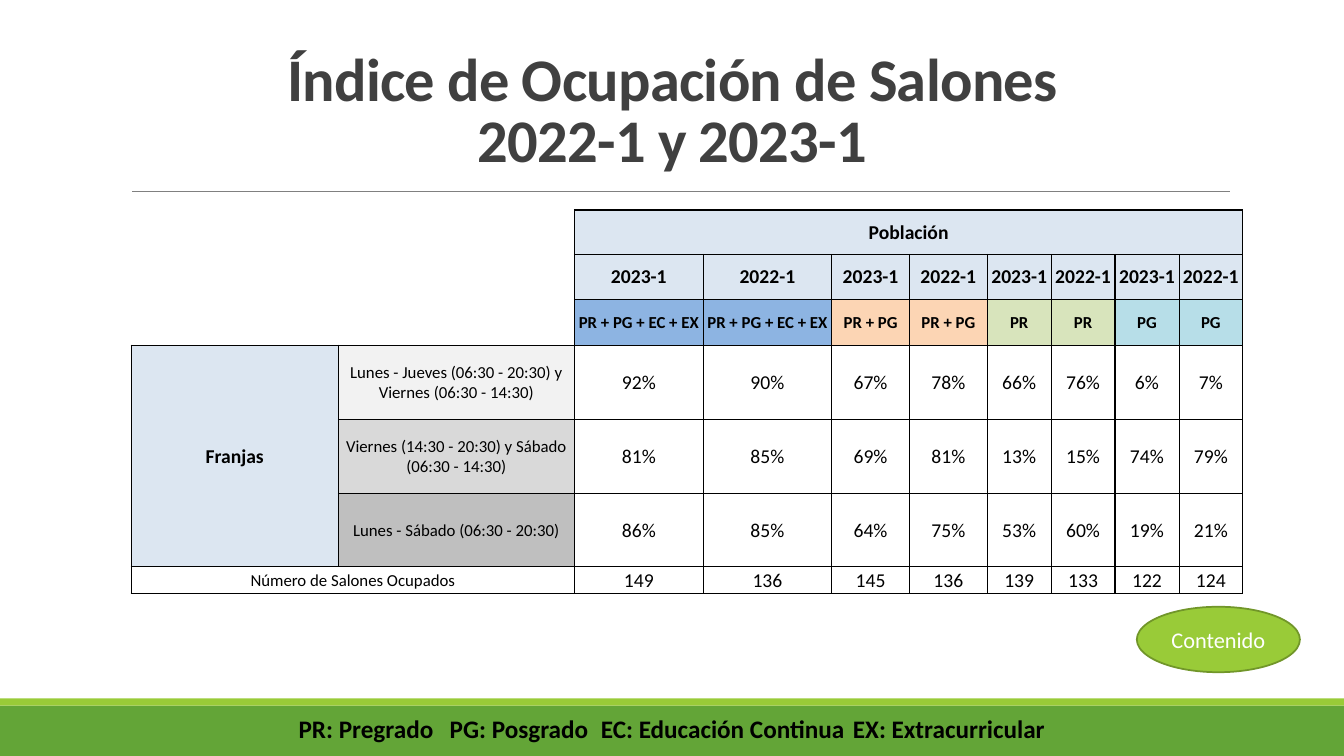
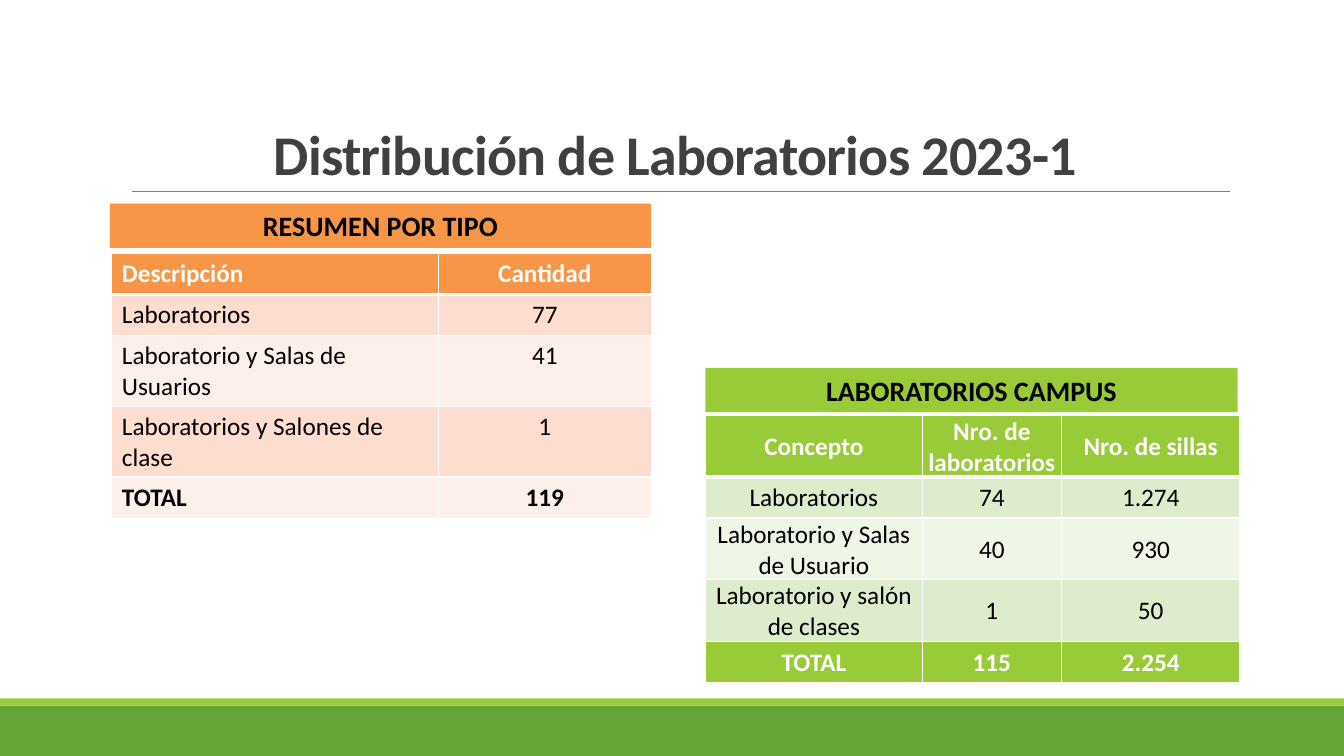
from dataclasses import dataclass
from typing import NamedTuple

from lxml.etree import SubElement
from pptx import Presentation
from pptx.dml.color import RGBColor
from pptx.enum.shapes import MSO_CONNECTOR, MSO_SHAPE
from pptx.enum.text import MSO_ANCHOR, PP_ALIGN
from pptx.oxml import parse_xml
from pptx.oxml.ns import nsdecls, qn
from pptx.shapes.autoshape import Shape
from pptx.slide import Slide
from pptx.table import Table, _Cell
from pptx.text.text import TextFrame
from pptx.util import Cm, Pt


@dataclass(frozen=True)
class Theme:
    font: str = "Calibri"
    black: str = "000000"
    white: str = "FFFFFF"
    title: str = "404040"
    rule: str = "808080"
    green: str = "63A537"
    lime: str = "99CB38"
    olive: str = "719629"
    lime_bands: tuple[str, str] = ("DEECCE", "EFF6E8")
    orange: str = "F79646"
    orange_bands: tuple[str, str] = ("FCDDCF", "FDEFE9")
    header: str = "DCE6F1"
    populations: tuple[str, ...] = ("8DB4E2", "FCD5B4", "D8E4BC", "B7DEE8")
    greys: tuple[str, ...] = ("F2F2F2", "D9D9D9", "BFBFBF")
    banner_size: float = 20
    body_size: float = 18
    button_size: float = 16
    value_size: float = 14
    label_size: float = 12


THEME = Theme()


class Area(NamedTuple):
    left: float
    top: float
    width: float
    height: float


class Edges(NamedTuple):
    left: float = 0
    right: float = 0
    top: float = 0
    bottom: float = 0


@dataclass(frozen=True)
class Type:
    size: float
    color: str = THEME.black
    bold: bool = False
    align: PP_ALIGN = PP_ALIGN.CENTER
    anchor: MSO_ANCHOR = MSO_ANCHOR.MIDDLE
    tracking: int = 0
    line_spacing: float | None = None


@dataclass(frozen=True)
class Summary:
    heading: str
    banner: Area
    color: str
    bands: tuple[str, str]
    left: float
    top: float
    columns: tuple[float, ...]
    heights: tuple[float, ...]
    rows: tuple[tuple[str, ...], ...]
    compact: bool
    filled_total: bool


def write(frame: TextFrame, text: str, kind: Type) -> None:
    frame.word_wrap = True
    para = frame.paragraphs[0]
    para.alignment = kind.align
    para.line_spacing = kind.line_spacing
    for index, line in enumerate(text.split("\n")):
        if index:
            para.add_line_break()
        span = para.add_run()
        span.text = line
        span.font.name = THEME.font
        span.font.size = Pt(kind.size)
        span.font.bold = kind.bold
        span.font.color.rgb = RGBColor.from_string(kind.color)
        if kind.tracking:
            span.font._element.set("spc", str(kind.tracking))


def add_text(page: Slide, area: Area, text: str, kind: Type) -> None:
    box = page.shapes.add_textbox(*map(Cm, area))
    box.text_frame.vertical_anchor = kind.anchor
    write(box.text_frame, text, kind)


def add_block(page: Slide, area: Area, fill: str,
              preset: MSO_SHAPE = MSO_SHAPE.RECTANGLE) -> Shape:
    box = page.shapes.add_shape(preset, *map(Cm, area))
    box.shadow.inherit = False
    box.fill.solid()
    box.fill.fore_color.rgb = RGBColor.from_string(fill)
    box.line.fill.background()
    return box


def add_page(deck: Presentation, title: str, area: Area, size: float) -> Slide:
    page = deck.slides.add_slide(deck.slide_layouts[6])
    add_block(page, Area(0, 17.78, 33.87, 1.27), THEME.green)
    add_block(page, Area(0, 17.6, 33.87, 0.18), THEME.lime)
    rule = page.shapes.add_connector(
        MSO_CONNECTOR.STRAIGHT, Cm(3.33), Cm(4.82), Cm(31), Cm(4.82))
    rule.line.color.rgb = RGBColor.from_string(THEME.rule)
    rule.line.width = Pt(0.5)
    SubElement(rule._element.spPr, qn("a:effectLst"))
    add_text(page, area, title, Type(
        size, THEME.title, bold=True, anchor=MSO_ANCHOR.BOTTOM,
        tracking=-50, line_spacing=0.85))
    return page


def add_grid(page: Slide, left: float, top: float, columns: tuple[float, ...],
             heights: tuple[float, ...]) -> Table:
    table = page.shapes.add_table(
        len(heights), len(columns), Cm(left), Cm(top),
        Cm(sum(columns)), Cm(sum(heights))).table
    table.first_row = False
    table.horz_banding = False
    for column, width in zip(table.columns, columns):
        column.width = Cm(width)
    for row, height in zip(table.rows, heights):
        row.height = Cm(height)
    return table


def set_edges(cell: _Cell, edges: Edges, color: str) -> None:
    properties = cell._tc.get_or_add_tcPr()
    for index, (side, width) in enumerate(zip("LRTB", edges)):
        paint = (f'<a:solidFill><a:srgbClr val="{color}"/></a:solidFill>'
                 if width else "<a:noFill/>")
        properties.insert(index, parse_xml(
            f'<a:ln{side} {nsdecls("a")} w="{Pt(width)}">{paint}</a:ln{side}>'))


def fill_cell(cell: _Cell, text: str, kind: Type, fill: str, edges: Edges,
              edge_color: str, compact: bool = True) -> None:
    cell.fill.solid()
    cell.fill.fore_color.rgb = RGBColor.from_string(fill)
    cell.vertical_anchor = kind.anchor
    if compact:
        cell.margin_left = cell.margin_right = cell.margin_top = Cm(0.03)
        cell.margin_bottom = 0
    if text:
        write(cell.text_frame, text, kind)
    set_edges(cell, edges, edge_color)


def add_occupancy(page: Slide) -> None:
    groups = ("PR + PG + EC + EX", "PR + PG", "PR", "PG")
    slots = (
        "Lunes - Jueves (06:30 - 20:30) y Viernes (06:30 - 14:30)",
        "Viernes (14:30 - 20:30) y Sábado (06:30 - 14:30)",
        "Lunes - Sábado (06:30 - 20:30)",
    )
    values = (
        ("92%", "90%", "67%", "78%", "66%", "76%", "6%", "7%"),
        ("81%", "85%", "69%", "81%", "13%", "15%", "74%", "79%"),
        ("86%", "85%", "64%", "75%", "53%", "60%", "19%", "21%"),
        ("149", "136", "145", "136", "139", "133", "122", "124"),
    )
    strong = Type(THEME.value_size, bold=True)
    group_type = Type(THEME.label_size, bold=True)
    label = Type(THEME.label_size)
    number = Type(THEME.value_size)
    table = add_grid(page, 3.31, 5.29,
                     (5.21, 5.96, 3.24, 3.24, 1.96, 1.96) + (1.61,) * 4,
                     (1.12, 1.12, 1.17, 1.86, 1.86, 1.86, 0.67))

    def put(row: int, column: int, text: str, kind: Type, fill: str,
            edges: Edges) -> None:
        fill_cell(table.cell(row, column), text, kind, fill, edges, THEME.black)

    for row in range(3):
        for column in range(2):
            put(row, column, "", label, THEME.white,
                Edges(right=column, bottom=int(row == 2)))
    for index in range(8):
        column, group = index + 2, index // 2
        sides = (1, 0.5) if index % 2 == 0 else (0.5, 1)
        put(0, column, "" if index else "Población", strong, THEME.header,
            Edges(1, 1, 1, 1))
        put(1, column, ("2023-1", "2022-1")[index % 2], strong, THEME.header,
            Edges(*sides, 1, 0.5))
        put(2, column, groups[group], group_type, THEME.populations[group],
            Edges(*sides, 0.5, 0.5))
        for row, line in enumerate(values, 3):
            put(row, column, line[index], number, THEME.white,
                Edges(*sides, 0.5, 1 if row == 6 else 0.5))
    for index, slot in enumerate(slots):
        put(index + 3, 0, "" if index else "Franjas", strong, THEME.header,
            Edges(1, 0.5, 1, 0.5))
        put(index + 3, 1, slot, label, THEME.greys[index],
            Edges(0.5, 1, 0.5 if index else 1, 0.5))
    for column, text in enumerate(("Número de Salones Ocupados", "")):
        put(6, column, text, label, THEME.white, Edges(1, 1, 0.5, 1))
    for first, last in (((0, 2), (0, 9)), ((3, 0), (5, 0)), ((6, 0), (6, 1))):
        table.cell(*first).merge(table.cell(*last))


def add_summary(page: Slide, summary: Summary) -> None:
    banner = add_block(page, summary.banner, summary.color)
    write(banner.text_frame, summary.heading, Type(THEME.banner_size, bold=True))
    table = add_grid(page, summary.left, summary.top, summary.columns,
                     summary.heights)
    last = len(summary.rows) - 1
    for row, line in enumerate(summary.rows):
        filled = row == 0 or (row == last and summary.filled_total)
        fill = summary.color if filled else summary.bands[(row - 1) % 2]
        edges = Edges(1, 1, 3 if row == 1 else 1, 3 if row == 0 else 1)
        for column, text in enumerate(line):
            flush = column == 0 and not summary.compact
            kind = Type(
                THEME.body_size, THEME.white if filled else THEME.black,
                bold=row in (0, last),
                align=PP_ALIGN.LEFT if flush else PP_ALIGN.CENTER,
                anchor=MSO_ANCHOR.MIDDLE if summary.compact else MSO_ANCHOR.TOP)
            fill_cell(table.cell(row, column), text, kind, fill, edges,
                      THEME.white, summary.compact)


SUMMARIES = (
    Summary(
        "RESUMEN POR TIPO", Area(2.77, 5.13, 13.64, 1.12),
        THEME.orange, THEME.orange_bands, 2.82, 6.38,
        (8.23, 5.36), (1.04, 1.04, 1.78, 1.78, 1.04),
        (("Descripción", "Cantidad"),
         ("Laboratorios", "77"),
         ("Laboratorio y Salas de Usuarios", "41"),
         ("Laboratorios y Salones de clase", "1"),
         ("TOTAL", "119")),
        compact=False, filled_total=False),
    Summary(
        "LABORATORIOS CAMPUS", Area(17.78, 9.27, 13.41, 1.12),
        THEME.lime, THEME.lime_bands, 17.78, 10.46,
        (5.46, 3.51, 4.5), (1.55, 1.04, 1.55, 1.55, 1.04),
        (("Concepto", "Nro. de laboratorios", "Nro. de sillas"),
         ("Laboratorios", "74", "1.274"),
         ("Laboratorio y Salas de Usuario", "40", "930"),
         ("Laboratorio y salón de clases", "1", "50"),
         ("TOTAL", "115", "2.254")),
        compact=True, filled_total=True),
)


def add_occupancy_page(deck: Presentation) -> None:
    page = add_page(deck, "Índice de Ocupación de Salones\n2022-1 y 2023-1",
                    Area(2.34, 0.86, 29.21, 3.68), 43.2)
    legend = ("PR: Pregrado", "PG: Posgrado", "EC: Educación Continua",
              "EX: Extracurricular")
    add_text(page, Area(5.21, 17.86, 23.44, 1.02), "\t".join(legend),
             Type(THEME.body_size, bold=True, anchor=MSO_ANCHOR.TOP))
    button = add_block(page, Area(28.65, 15.29, 4.11, 1.65), THEME.lime,
                       MSO_SHAPE.OVAL)
    button.line.color.rgb = RGBColor.from_string(THEME.olive)
    button.line.width = Pt(1.25)
    button.text_frame.margin_left = button.text_frame.margin_right = 0
    write(button.text_frame, "Contenido", Type(THEME.button_size, THEME.white))
    add_occupancy(page)


def add_laboratory_page(deck: Presentation) -> None:
    page = add_page(deck, "Distribución de Laboratorios 2023-1",
                    Area(3.05, 0.79, 27.94, 4.04), 40)
    for summary in SUMMARIES:
        add_summary(page, summary)


def main() -> None:
    deck = Presentation()
    deck.slide_width, deck.slide_height = Cm(33.87), Cm(19.05)
    add_occupancy_page(deck)
    add_laboratory_page(deck)
    deck.save("out.pptx")


if __name__ == "__main__":
    main()
